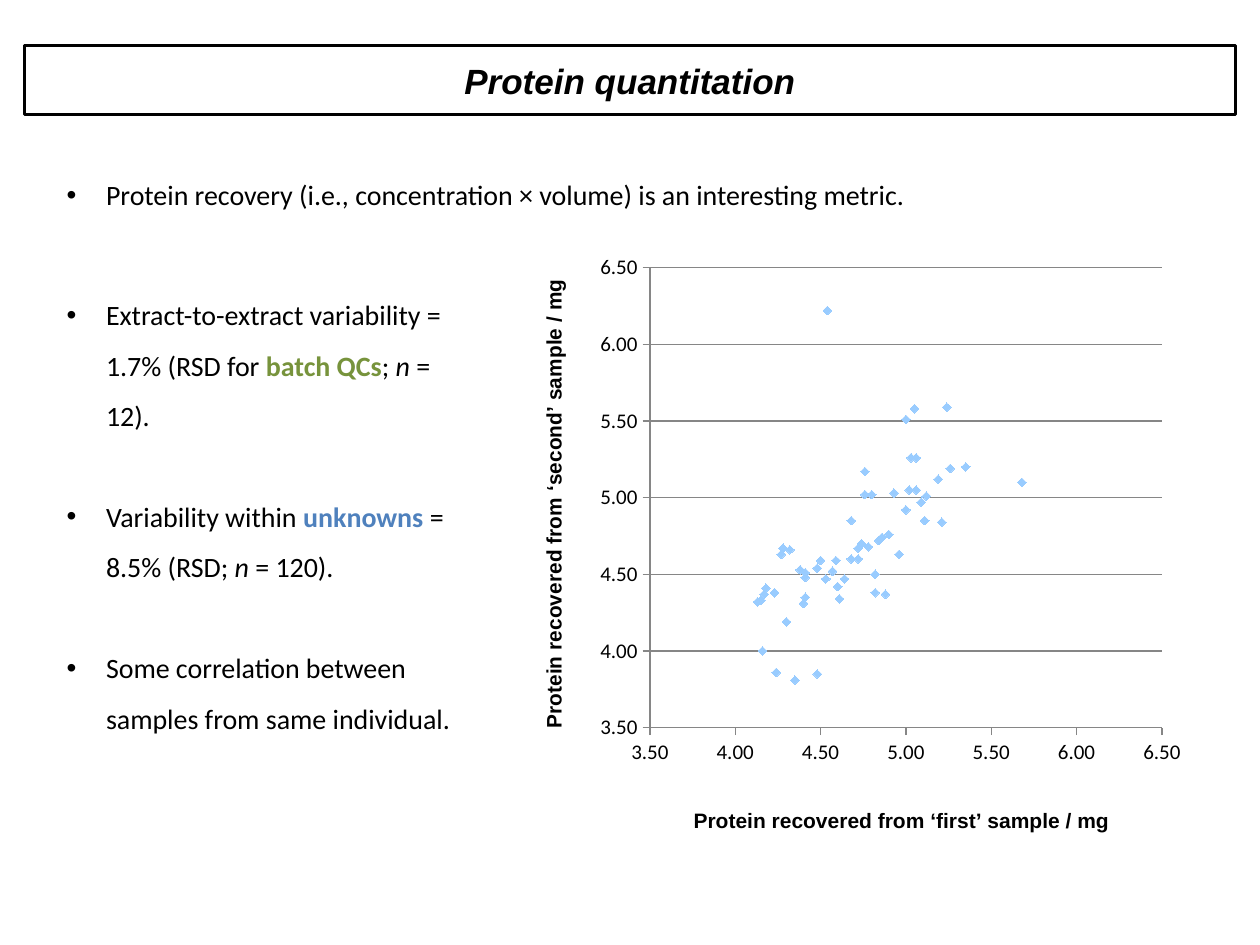
from dataclasses import dataclass

from lxml.etree import SubElement
from pptx import Presentation
from pptx.chart.data import XyChartData
from pptx.dml.color import RGBColor
from pptx.enum.chart import XL_CHART_TYPE, XL_MARKER_STYLE, XL_TICK_MARK
from pptx.enum.shapes import MSO_SHAPE
from pptx.enum.text import MSO_ANCHOR, PP_ALIGN
from pptx.oxml import parse_xml
from pptx.oxml.ns import nsdecls, qn
from pptx.util import Pt

COLORS = {"text": "000000", "batch": "77933C", "unknown": "4F81BD",
          "marker": "99CCFF", "axis": "868686"}
BODY = {"name": "Calibri", "size": Pt(16), "bold": False, "italic": False}
TITLE = {"name": "Arial", "size": Pt(20), "bold": True, "italic": True}
AXIS_LABEL = {"name": "Calibri", "size": Pt(12), "bold": False}
AXIS_TITLE = {"name": "Arial", "size": Pt(12), "bold": True}
INDENT = Pt(22.5)

# (first sample, second sample) in mg
RECOVERIES = [
    (4.90, 4.76), (4.53, 4.47), (4.16, 4.00), (4.30, 4.19), (5.12, 5.01), (4.61, 4.34),
    (4.64, 4.47), (4.72, 4.60), (5.24, 5.59), (4.68, 4.60), (4.78, 4.68), (4.54, 6.22),
    (5.35, 5.20), (4.32, 4.66), (4.41, 4.51), (5.06, 5.05), (4.68, 4.85), (4.50, 4.59),
    (5.26, 5.19), (5.19, 5.12), (4.60, 4.42), (4.76, 5.17), (4.28, 4.67), (5.00, 5.51),
    (4.84, 4.72), (4.82, 4.38), (4.86, 4.74), (4.35, 3.81), (4.17, 4.37), (4.27, 4.63),
    (4.48, 4.54), (4.41, 4.35), (4.76, 5.02), (4.93, 5.03), (5.03, 5.26), (4.48, 3.85),
    (4.41, 4.48), (4.38, 4.53), (4.15, 4.33), (4.13, 4.32), (5.21, 4.84), (4.40, 4.31),
    (4.59, 4.59), (4.82, 4.50), (5.05, 5.58), (5.00, 4.92), (4.23, 4.38), (4.88, 4.37),
    (5.11, 4.85), (5.06, 5.26), (4.18, 4.41), (5.02, 5.05), (5.09, 4.97), (4.96, 4.63),
    (4.80, 5.02), (4.74, 4.70), (4.57, 4.52), (4.72, 4.67), (4.24, 3.86), (5.68, 5.10),
]


@dataclass(frozen=True)
class Box:
    left: float
    top: float
    width: float
    height: float

    def lengths(self) -> tuple:
        return Pt(self.left), Pt(self.top), Pt(self.width), Pt(self.height)


@dataclass(frozen=True)
class Span:
    text: str
    color: str = "text"
    bold: bool = False
    italic: bool = False


def format_font(font, values: dict, color: str = "text") -> None:
    for attribute, value in values.items():
        setattr(font, attribute, value)
    font.color.rgb = RGBColor.from_string(COLORS[color])


def add_heading(slide, box: Box, text: str) -> None:
    shape = slide.shapes.add_shape(MSO_SHAPE.RECTANGLE, *box.lengths())
    shape.shadow.inherit = False
    shape.fill.background()
    shape.line.color.rgb = RGBColor.from_string(COLORS["text"])
    shape.line.width = Pt(1.5)
    shape.text_frame.vertical_anchor = MSO_ANCHOR.MIDDLE
    paragraph = shape.text_frame.paragraphs[0]
    paragraph.alignment = PP_ALIGN.CENTER
    run = paragraph.add_run()
    run.text = text
    format_font(run.font, TITLE)


def add_bullets(slide, box: Box, bullets: list[list[Span]], alignment: PP_ALIGN) -> None:
    frame = slide.shapes.add_textbox(*box.lengths()).text_frame
    frame.word_wrap = True
    for index, spans in enumerate(bullets):
        paragraph = frame.add_paragraph() if index else frame.paragraphs[0]
        paragraph.alignment = alignment
        paragraph.line_spacing = 1.5
        paragraph.space_before = Pt(29 if index else 0)
        properties = paragraph._p.get_or_add_pPr()
        properties.set("marL", str(INDENT))
        properties.set("indent", str(-INDENT))
        SubElement(properties, qn("a:buFont"), typeface="Arial")
        SubElement(properties, qn("a:buChar"), char="•")
        for span in spans:
            run = paragraph.add_run()
            run.text = span.text
            format_font(run.font, BODY | {"bold": span.bold, "italic": span.italic}, span.color)


def place(element, index: int, **fractions) -> None:
    """Fix a chart part at fractions of the chart's size."""
    for old in element.findall(qn("c:layout")):
        element.remove(old)
    layout = parse_xml(f"<c:layout {nsdecls('c')}><c:manualLayout/></c:layout>")
    settings = {"xMode": "edge", "yMode": "edge"} | fractions
    if "w" in fractions:
        settings = {"layoutTarget": "inner"} | settings
    for name, value in settings.items():
        SubElement(layout[0], qn(f"c:{name}"), val=str(value))
    element.insert(index, layout)


def format_axis(axis, title: str, left: float, top: float, rotation: int) -> None:
    settings = {"minimum_scale": 3.5, "maximum_scale": 6.5, "major_unit": 0.5,
                "major_tick_mark": XL_TICK_MARK.OUTSIDE,
                "minor_tick_mark": XL_TICK_MARK.NONE}
    for attribute, value in settings.items():
        setattr(axis, attribute, value)
    axis.tick_labels.number_format = "0.00"
    axis.tick_labels.number_format_is_linked = False
    format_font(axis.tick_labels.font, AXIS_LABEL)
    axis.format.line.color.rgb = RGBColor.from_string(COLORS["axis"])
    frame = axis.axis_title.text_frame
    run = frame.paragraphs[0].add_run()
    run.text = title
    format_font(run.font, AXIS_TITLE)
    body = frame._txBody.find(qn("a:bodyPr"))
    body.set("rot", str(rotation * 60000))
    body.set("vert", "horz")
    place(axis.axis_title._element, 1, x=left, y=top)


def add_scatter(slide, box: Box) -> None:
    data = XyChartData(number_format="0.00")
    points = data.add_series("Series 1")
    for first, second in RECOVERIES:
        points.add_data_point(first, second)
    chart = slide.shapes.add_chart(XL_CHART_TYPE.XY_SCATTER, *box.lengths(), data).chart
    chart.has_legend = False
    chart.has_title = False
    format_font(chart.font, {"name": "Calibri", "size": Pt(10)})
    chart.plots[0].vary_by_categories = False

    series = chart.plots[0].series[0]
    series.smooth = False
    series.format.line.fill.background()
    series.marker.style = XL_MARKER_STYLE.DIAMOND
    series.marker.size = 5
    series.marker.format.fill.solid()
    series.marker.format.fill.fore_color.rgb = RGBColor.from_string(COLORS["marker"])
    series.marker.format.line.fill.background()

    format_axis(chart.category_axis, "Protein recovered from ‘first’ sample / mg", 0.24, 0.95, 0)
    format_axis(chart.value_axis, "Protein recovered from ‘second’ sample / mg", 0.01, 0.06, -90)
    chart.category_axis.has_major_gridlines = False
    gridlines = chart.value_axis.major_gridlines.format.line
    gridlines.color.rgb = RGBColor.from_string(COLORS["axis"])
    place(chart._chartSpace.chart.plotArea, 0, x=0.18, y=0.04, w=0.77, h=0.78)


def main() -> None:
    presentation = Presentation()
    presentation.slide_width, presentation.slide_height = Pt(720), Pt(540)
    slide = presentation.slides.add_slide(presentation.slide_layouts[6])

    add_heading(slide, Box(14, 26, 692, 39.5), "Protein quantitation")
    recovery = [Span("Protein recovery (i.e., concentration × volume) is an interesting metric.")]
    add_bullets(slide, Box(31, 88.5, 652, 32.5), [recovery], PP_ALIGN.JUSTIFY)
    findings = [
        [Span("Extract-to-extract variability = 1.7% (RSD for "),
         Span("batch QCs", "batch", bold=True), Span("; "),
         Span("n", italic=True), Span(" = 12).")],
        [Span("Variability within "), Span("unknowns", "unknown", bold=True),
         Span(" = 8.5% (RSD; "), Span("n", italic=True), Span(" = 120).")],
        [Span("Some correlation between samples from same individual.")],
    ]
    add_bullets(slide, Box(31, 157, 244, 356.5), findings, PP_ALIGN.LEFT)
    add_scatter(slide, Box(303, 139.5, 380, 340))

    presentation.save("out.pptx")


if __name__ == "__main__":
    main()
